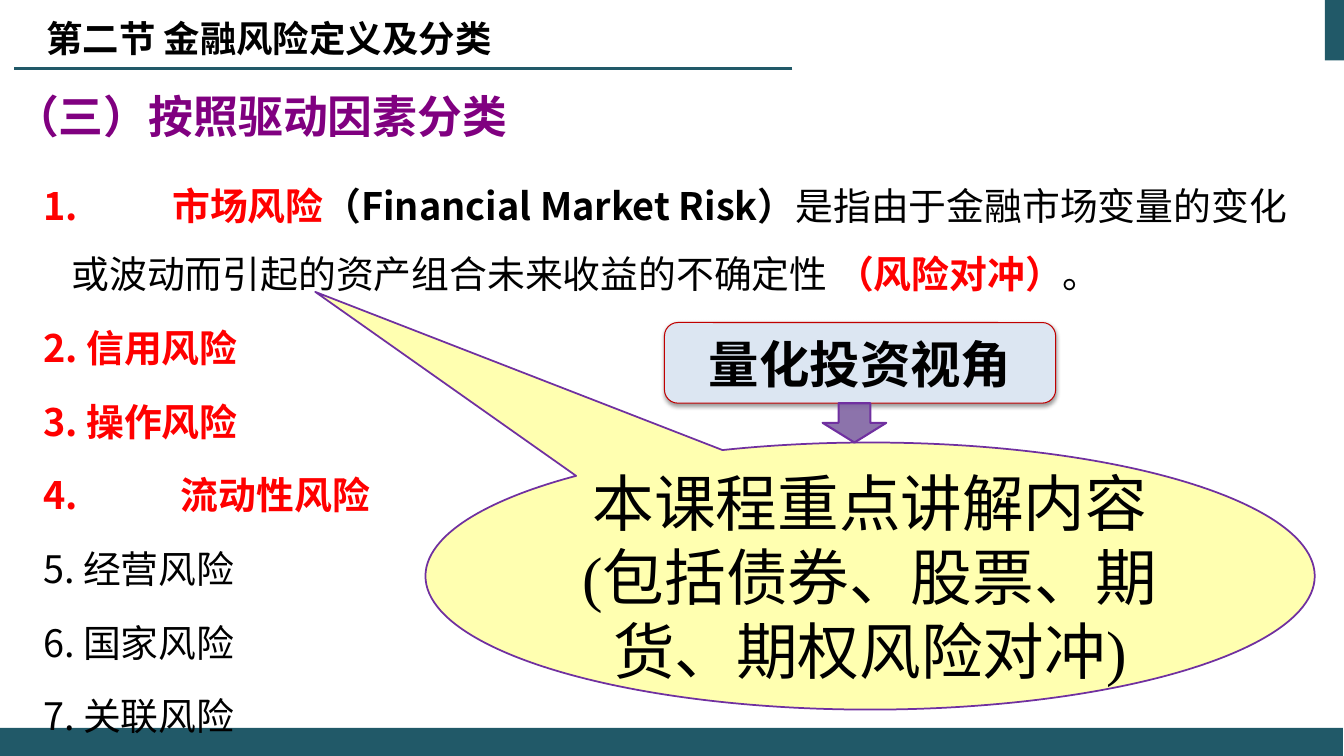
from lxml.etree import SubElement
from pptx import Presentation
from pptx.dml.color import RGBColor
from pptx.enum.shapes import MSO_CONNECTOR, MSO_SHAPE
from pptx.enum.text import MSO_ANCHOR, MSO_AUTO_SIZE, PP_ALIGN
from pptx.oxml.ns import qn
from pptx.util import Inches, Pt

COLORS = {
    "teal": "215968", "purple": "800080", "red": "FF0000", "black": "000000",
    "yellow": "FFFF00", "violet": "7030A0", "pale": "DCE6F2",
    "wine": "C00000", "mauve": "8064A2",
}
SANS = "Noto Sans CJK SC"


class Page:
    def __init__(self, deck):
        self.slide = deck.slides.add_slide(deck.slide_layouts[5])
        self.shapes = self.slide.shapes

    def color(self, name):
        return RGBColor.from_string(COLORS[name])

    def place(self, item, box):
        for key, value in zip(("left", "top", "width", "height"), box):
            setattr(item, key, Inches(value))

    def fill(self, item, name, alpha=100):
        item.fill.solid()
        item.fill.fore_color.rgb = self.color(name)
        if alpha < 100:
            tone = item._element.spPr.find(qn("a:solidFill")).find(qn("a:srgbClr"))
            SubElement(tone, qn("a:alpha"), val=str(alpha * 1000))

    def letter(self, item, paras, style, frame=None, format=None, tab=None):
        """Each paragraph is a list of (text, changes to the style)."""
        body = item.text_frame
        for key, value in (frame or {}).items():
            setattr(body, key, value)
        for i, runs in enumerate(paras):
            para = body.add_paragraph() if i else body.paragraphs[0]
            props = para._p.get_or_add_pPr()
            for key, value in (tab or {}).items():
                props.set(key, str(Inches(value)))
            for key, value in (format or {}).items():
                if i or key != "space_before":
                    setattr(para, key, value)
            for text, change in runs:
                self.run(para, text, {**style, **change})

    def run(self, para, text, style):
        run = para.add_run()
        run.text = text
        font = run.font
        font.color.rgb = self.color(style["color"])
        for key in ("name", "size", "bold"):
            setattr(font, key, style[key])
        SubElement(font._element, qn("a:ea"), typeface=SANS)

    def title(self, text, box, style):
        item = self.shapes.title
        self.place(item, box)
        self.letter(item, [[(text, {})]], style,
                    {"vertical_anchor": MSO_ANCHOR.MIDDLE, "word_wrap": True},
                    {"alignment": PP_ALIGN.LEFT})

    def text(self, box, paras, style, wrap=True, format=None, tab=None):
        item = self.shapes.add_textbox(*map(Inches, box))
        self.letter(item, paras, style,
                    {"word_wrap": wrap,
                     "auto_size": MSO_AUTO_SIZE.SHAPE_TO_FIT_TEXT}, format, tab)

    def shape(self, kind, box, fill, alpha=100, line=None, width=1):
        item = self.shapes.add_shape(kind, *map(Inches, box))
        item.shadow.inherit = False
        self.fill(item, fill, alpha)
        if line:
            item.line.color.rgb = self.color(line)
            item.line.width = Pt(width)
        else:
            item.line.fill.background()
        return item

    def label(self, item, lines, style):
        self.letter(item, [[(line, {})] for line in lines], style,
                    {"vertical_anchor": MSO_ANCHOR.MIDDLE, "word_wrap": True},
                    {"alignment": PP_ALIGN.CENTER})

    def shade(self, item):
        effect = item._element.spPr.find(qn("a:effectLst"))
        cast = SubElement(effect, qn("a:outerShdw"), blurRad=str(Pt(3.1)),
                          dist=str(Pt(1.6)), dir="5400000", rotWithShape="0")
        tone = SubElement(cast, qn("a:srgbClr"), val=COLORS["black"])
        SubElement(tone, qn("a:alpha"), val="38000")

    def rule(self, start, end, name, width):
        item = self.shapes.add_connector(
            MSO_CONNECTOR.STRAIGHT, *map(Inches, start + end))
        item.line.color.rgb = self.color(name)
        item.line.width = Pt(width)
        SubElement(item._element.spPr, qn("a:effectLst"))


def font(size, color="black", bold=True, name=SANS):
    return {"size": Pt(size), "color": color, "bold": bold, "name": name}


def main():
    deck = Presentation()
    deck.slide_width, deck.slide_height = Inches(13.33), Inches(7.5)
    page = Page(deck)

    # Frame of the slide
    page.shape(MSO_SHAPE.RECTANGLE, (0, 7.22, 13.32, 0.28), "teal")
    page.rule((7.86, 0.68), (0.14, 0.68), "teal", 1.5)
    page.shape(MSO_SHAPE.RECTANGLE, (13.14, 0, 0.2, 0.6), "teal")

    # Title
    page.title("（三）按照驱动因素分类", (0.04, 0.76, 12, 0.78),
               font(32, "purple"))

    # List of risks
    red, plain = {"color": "red"}, {"bold": False}
    market = [
        ("1.\t市场风险", red),
        ("（Financial Market Risk）", {}),
        ("是指由于金融市场变量的变化或波动而引起的资产组合未来收益的不确定性 ", plain),
        ("（风险对冲）", red),
        ("。", plain),
    ]
    key = ["2. 信用风险", "3. 操作风险", "4.\t 流动性风险"]
    other = ["5. 经营风险", "6. 国家风险", "7. 关联风险"]
    risks = [market] + [[(t, red)] for t in key] + [[(t, plain)] for t in other]
    page.text((0.21, 1.54, 12.79, 5.89), risks, font(27),
              format={"line_spacing": 1.5, "space_before": Pt(4)},
              tab={"marL": 0.4, "indent": -0.28, "defTabSz": 1})

    # Callout on the course focus
    focus = page.shape(MSO_SHAPE.OVAL_CALLOUT, (4.22, 4.39, 8.82, 2.65),
                       "yellow", 31, "violet", 1.25)
    focus.adjustments[0], focus.adjustments[1] = -0.624, -1.064
    page.label(focus, ["本课程重点讲解内容", "(包括债券、股票、期货、期权风险对冲)"],
               font(44, bold=False, name="Times New Roman"))

    # Point of view and its arrow
    view = page.shape(MSO_SHAPE.ROUNDED_RECTANGLE, (6.59, 3.2, 3.88, 0.8),
                      "pale", line="wine", width=0.75)
    page.shade(view)
    page.label(view, ["量化投资视角"], font(36, name="Calibri"))
    page.shape(MSO_SHAPE.DOWN_ARROW, (8.16, 4, 0.63, 0.39),
               "mauve", 90, "violet", 1.5)

    # Section heading
    page.text((0.36, 0.11, 4.69, 0.54), [[("第二节 金融风险定义及分类", {})]],
              font(26), wrap=False)

    deck.save("out.pptx")


if __name__ == "__main__":
    main()
